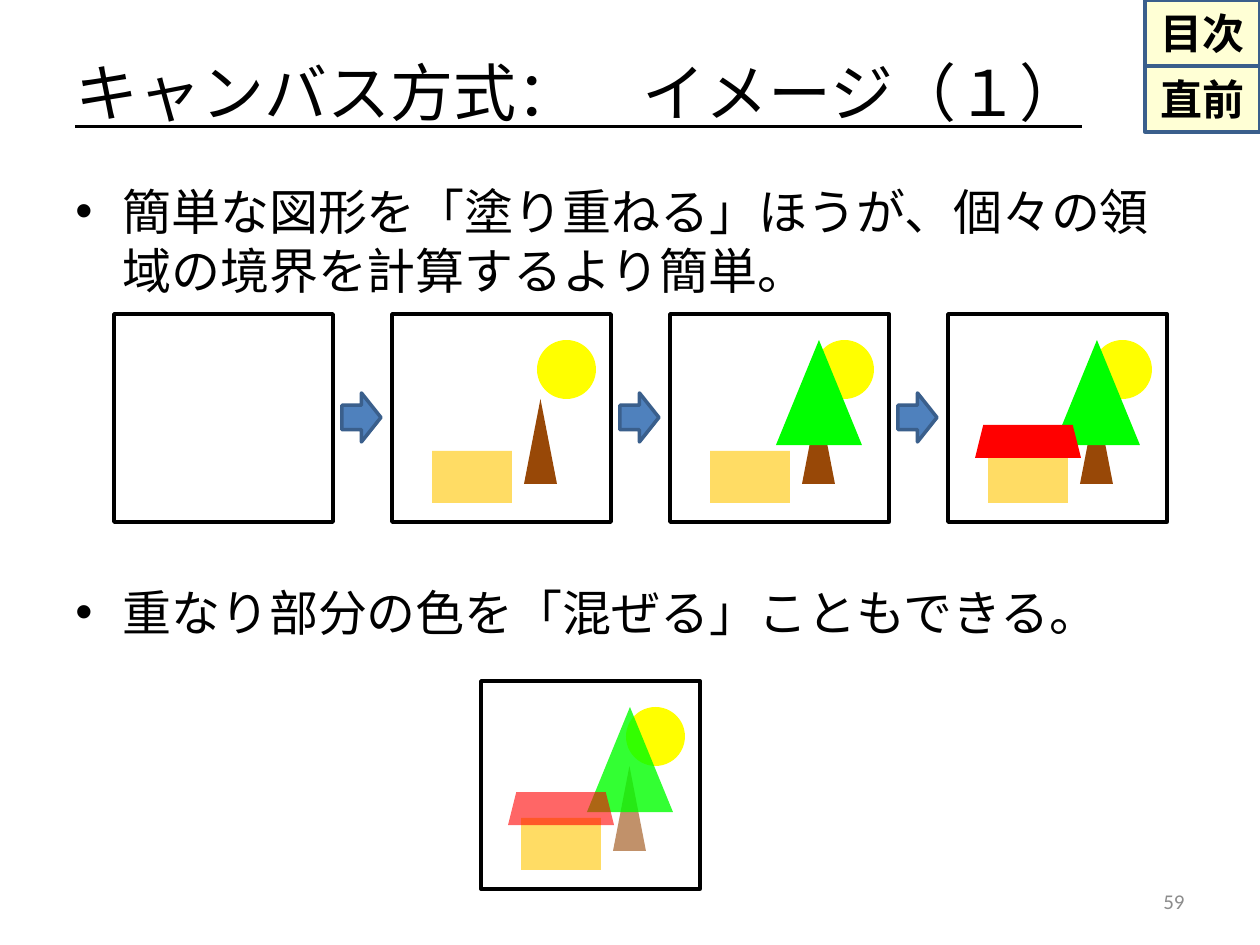
import pptx
import pptx.util
from lxml import etree
from pptx.dml.color import RGBColor
from pptx.enum.shapes import MSO_SHAPE
from pptx.enum.text import MSO_ANCHOR, PP_ALIGN
from pptx.oxml.ns import qn

PX = 914400 / 126
BLACK = RGBColor(0, 0, 0)
GRAY = RGBColor(0x8C, 0x8C, 0x8C)
CREAM = RGBColor(0xFF, 0xFF, 0xD5)
NAVY = RGBColor(0x3A, 0x5F, 0x8C)
BLUE = RGBColor(0x4F, 0x81, 0xBD)
YELLOW = RGBColor(0xFF, 0xFF, 0)
BROWN = RGBColor(0x98, 0x48, 0x07)
GREEN = RGBColor(0, 0xFF, 0)
SAND = RGBColor(0xFF, 0xDC, 0x64)
RED = RGBColor(0xFF, 0, 0)

SCENE = {
    "sun": (MSO_SHAPE.OVAL, (145, 26, 59, 59), YELLOW),
    "trunk": (MSO_SHAPE.ISOSCELES_TRIANGLE, (132, 85, 33, 85), BROWN),
    "leaves": (MSO_SHAPE.ISOSCELES_TRIANGLE, (106, 26, 86, 105), GREEN),
    "wall": (MSO_SHAPE.RECTANGLE, (40, 137, 80, 52), SAND),
    "roof": (MSO_SHAPE.TRAPEZOID, (27, 111, 106, 33), RED),
}
STAGES = [
    (),
    ("sun", "trunk", "wall"),
    ("sun", "trunk", "leaves", "wall"),
    tuple(SCENE),
]
BLEND = {"trunk": 60, "leaves": 80, "roof": 60}


def px(value):
    return pptx.util.Emu(round(value * PX))


def write_text(shape, text, *, size, font="Times New Roman", color=BLACK, bold=False,
               underline=False, align=PP_ALIGN.LEFT, anchor=MSO_ANCHOR.TOP, bullet=False):
    frame = shape.text_frame
    frame.word_wrap = True
    frame.vertical_anchor = anchor
    para = frame.paragraphs[0]
    para.alignment = align
    span = para.add_run()
    span.text = text
    span.font.name = font
    span.font.size = pptx.util.Pt(size)
    span.font.bold = bold
    span.font.underline = underline
    span.font.color.rgb = color
    if bullet:
        properties = para._p.get_or_add_pPr()
        properties.set("marL", str(px(47)))
        properties.set("indent", str(px(-47)))
        etree.SubElement(properties, qn("a:buFont")).set("typeface", "Arial")
        etree.SubElement(properties, qn("a:buChar")).set("char", "•")


def add_text(page, box, text, **style):
    write_text(page.shapes.add_textbox(*map(px, box)), text, **style)


def add_figure(shapes, kind, box, fill=None, line=None, opacity=100):
    figure = shapes.add_shape(kind, *map(px, box))
    figure.shadow.inherit = False
    if fill is None:
        figure.fill.background()
    else:
        figure.fill.solid()
        figure.fill.fore_color.rgb = fill
        if opacity < 100:
            color = figure._element.spPr.find(".//" + qn("a:srgbClr"))
            etree.SubElement(color, qn("a:alpha")).set("val", str(opacity * 1000))
    if line is None:
        figure.line.fill.background()
    else:
        figure.line.color.rgb = line
        figure.line.width = pptx.util.Pt(2)
    return figure


def add_canvas(page, left, top, parts, opacities=None):
    shapes = page.shapes.add_group_shape().shapes if parts else page.shapes
    for part in parts:
        kind, (x, y, width, height), color = SCENE[part]
        add_figure(shapes, kind, (left + x, top + y, width, height), color,
                   opacity=(opacities or {}).get(part, 100))
    add_figure(shapes, MSO_SHAPE.RECTANGLE, (left, top, 219, 208), line=BLACK)


def add_button(page, top, text):
    button = add_figure(page.shapes, MSO_SHAPE.ACTION_BUTTON_CUSTOM,
                        (1145, top, 115, 66), CREAM, NAVY)
    write_text(button, text, size=24, font="Calibri", bold=True,
               align=PP_ALIGN.CENTER, anchor=MSO_ANCHOR.MIDDLE)


def main():
    deck = pptx.Presentation()
    deck.slide_width, deck.slide_height = px(1260), px(945)
    page = deck.slides.add_slide(deck.slide_layouts[6])

    for row, label in enumerate(("目次", "直前")):
        add_button(page, row * 66, label)
    add_text(page, (63, 38, 1134, 107), "キャンバス方式：\u3000イメージ（１）",
             size=36, underline=True, anchor=MSO_ANCHOR.MIDDLE)
    add_text(page, (63, 175, 1134, 130),
             "簡単な図形を「塗り重ねる」ほうが、個々の領域の境界を計算するより簡単。",
             size=28, bullet=True)
    add_text(page, (63, 576, 1134, 72), "重なり部分の色を「混ぜる」こともできる。",
             size=28, bullet=True)
    add_text(page, (903, 876, 294, 50), "59", size=12, font="Calibri", color=GRAY,
             align=PP_ALIGN.RIGHT, anchor=MSO_ANCHOR.MIDDLE)

    for index, parts in enumerate(STAGES):
        left = 114 + index * 278
        add_canvas(page, left, 314, parts)
        if index < len(STAGES) - 1:
            add_figure(page.shapes, MSO_SHAPE.RIGHT_ARROW, (left + 228, 393, 39, 49), BLUE, NAVY)
    add_canvas(page, 481, 681, tuple(SCENE), BLEND)

    deck.save("out.pptx")


if __name__ == "__main__":
    main()
